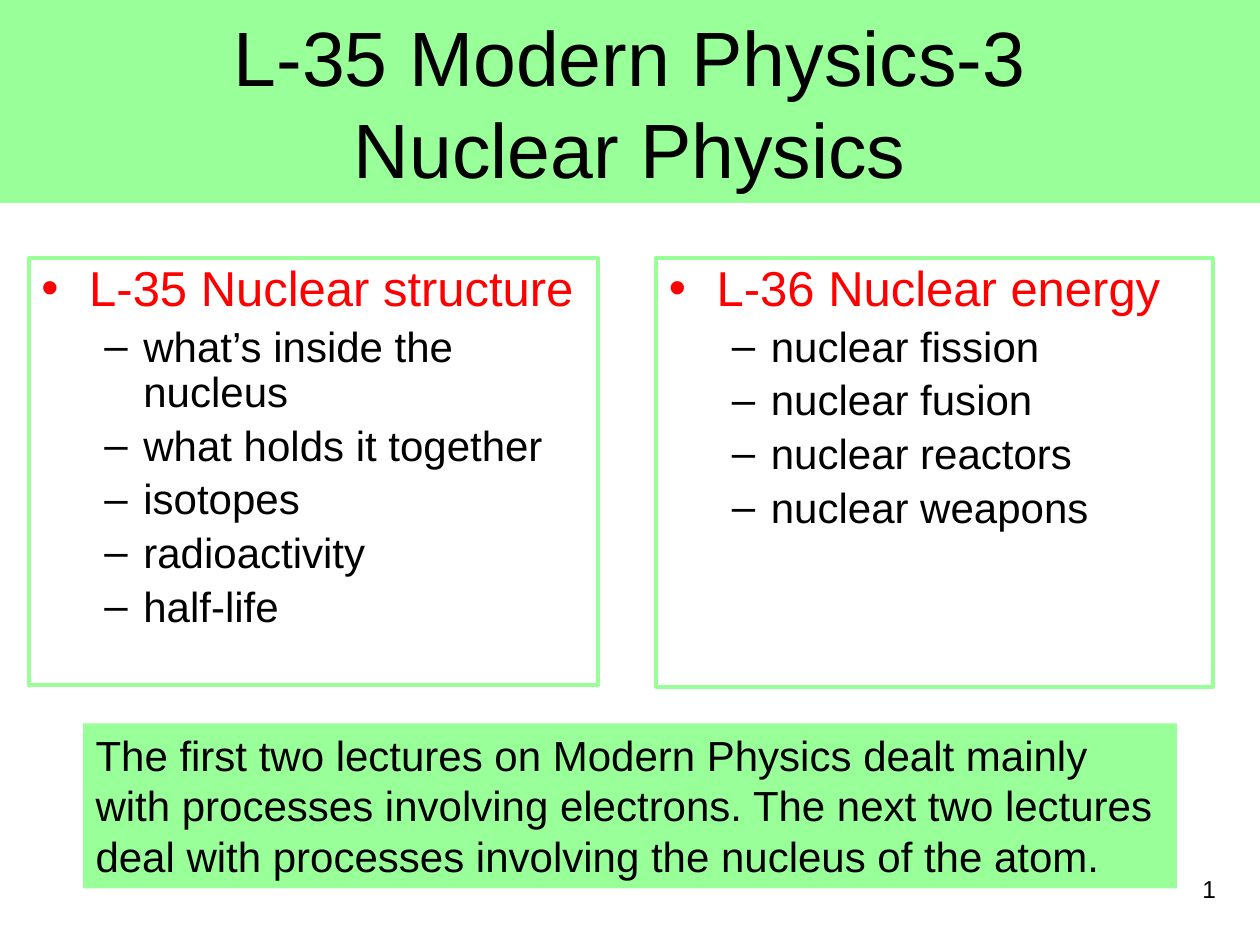
from dataclasses import dataclass

from lxml import etree
from pptx import Presentation
from pptx.dml.color import RGBColor
from pptx.enum import shapes, text
from pptx.oxml.ns import qn
from pptx.util import Inches, Pt

GREEN = RGBColor(0x99, 0xFF, 0x99)
RED = RGBColor(0xFF, 0x00, 0x00)
BLACK = RGBColor(0x00, 0x00, 0x00)
FONT = "Arial"


@dataclass
class Topic:
    left: float
    width: float
    height: float
    heading: str
    points: list[str]


TOPICS = [
    Topic(0.23, 4.52, 3.39, "L-35 Nuclear structure",
          ["what’s inside the nucleus", "what holds it together", "isotopes",
           "radioactivity", "half-life"]),
    Topic(5.21, 4.42, 3.4, "L-36 Nuclear energy",
          ["nuclear fission", "nuclear fusion", "nuclear reactors", "nuclear weapons"]),
]


def write(p, content: str, *, size: float, color=BLACK, align=text.PP_ALIGN.LEFT) -> None:
    p.alignment = align
    for i, line in enumerate(content.split("\n")):
        if i:
            p.add_line_break()
        r = p.add_run()
        r.text = line
        r.font.name = FONT
        r.font.size = Pt(size)
        r.font.color.rgb = color


def add_bullet(p, char: str, *, level: int, margin: float, hanging: float) -> None:
    p.level = level
    pPr = p._p.get_or_add_pPr()
    pPr.set("marL", str(Inches(margin)))
    pPr.set("indent", str(-Inches(hanging)))
    etree.SubElement(pPr, qn("a:buFont")).set("typeface", FONT)
    etree.SubElement(pPr, qn("a:buChar")).set("char", char)


def add_box(s, left: float, top: float, width: float, height: float, *,
            fill=None, line=None, anchor=text.MSO_ANCHOR.TOP, wrap: bool = True):
    sp = s.shapes.add_shape(shapes.MSO_SHAPE.RECTANGLE, Inches(left), Inches(top),
                            Inches(width), Inches(height))
    sp.shadow.inherit = False
    if fill is None:
        sp.fill.background()
    else:
        sp.fill.solid()
        sp.fill.fore_color.rgb = fill
    if line is None:
        sp.line.fill.background()
    else:
        sp.line.color.rgb = line
        sp.line.width = Pt(2.25)
    tf = sp.text_frame
    tf.word_wrap = wrap
    tf.vertical_anchor = anchor
    return tf


def add_topic(s, topic: Topic) -> None:
    tf = add_box(s, topic.left, 2.05, topic.width, topic.height, line=GREEN)
    for i, content in enumerate([topic.heading, *topic.points]):
        p = tf.add_paragraph() if i else tf.paragraphs[0]
        size = 24 if i else 28
        write(p, content, size=size, color=BLACK if i else RED)
        p.line_spacing = 0.9
        p.space_before = Pt(size * 0.2)
        if i:
            add_bullet(p, "–", level=1, margin=0.81, hanging=0.31)
        else:
            add_bullet(p, "•", level=0, margin=0.38, hanging=0.38)


def main() -> None:
    prs = Presentation()
    prs.slide_width, prs.slide_height = Inches(10), Inches(7.5)
    s = prs.slides.add_slide(prs.slide_layouts[6])

    title = add_box(s, 0, 0, 10, 1.61, fill=GREEN, anchor=text.MSO_ANCHOR.MIDDLE)
    write(title.paragraphs[0], "L-35 Modern Physics-3\nNuclear Physics",
          size=44, align=text.PP_ALIGN.CENTER)

    for topic in TOPICS:
        add_topic(s, topic)

    number = s.shapes.add_textbox(Inches(7.42), Inches(6.89), Inches(2.33), Inches(0.52))
    number.text_frame.word_wrap = True
    write(number.text_frame.paragraphs[0], "1", size=14, align=text.PP_ALIGN.RIGHT)

    summary = add_box(s, 0.66, 5.74, 8.68, 1.31, fill=GREEN, wrap=False)
    summary.auto_size = text.MSO_AUTO_SIZE.SHAPE_TO_FIT_TEXT
    write(summary.paragraphs[0],
          "The first two lectures on Modern Physics dealt mainly\n"
          "with processes involving electrons. The next two lectures\n"
          "deal with processes involving the nucleus of the atom.", size=24)

    prs.save("out.pptx")


if __name__ == "__main__":
    main()
